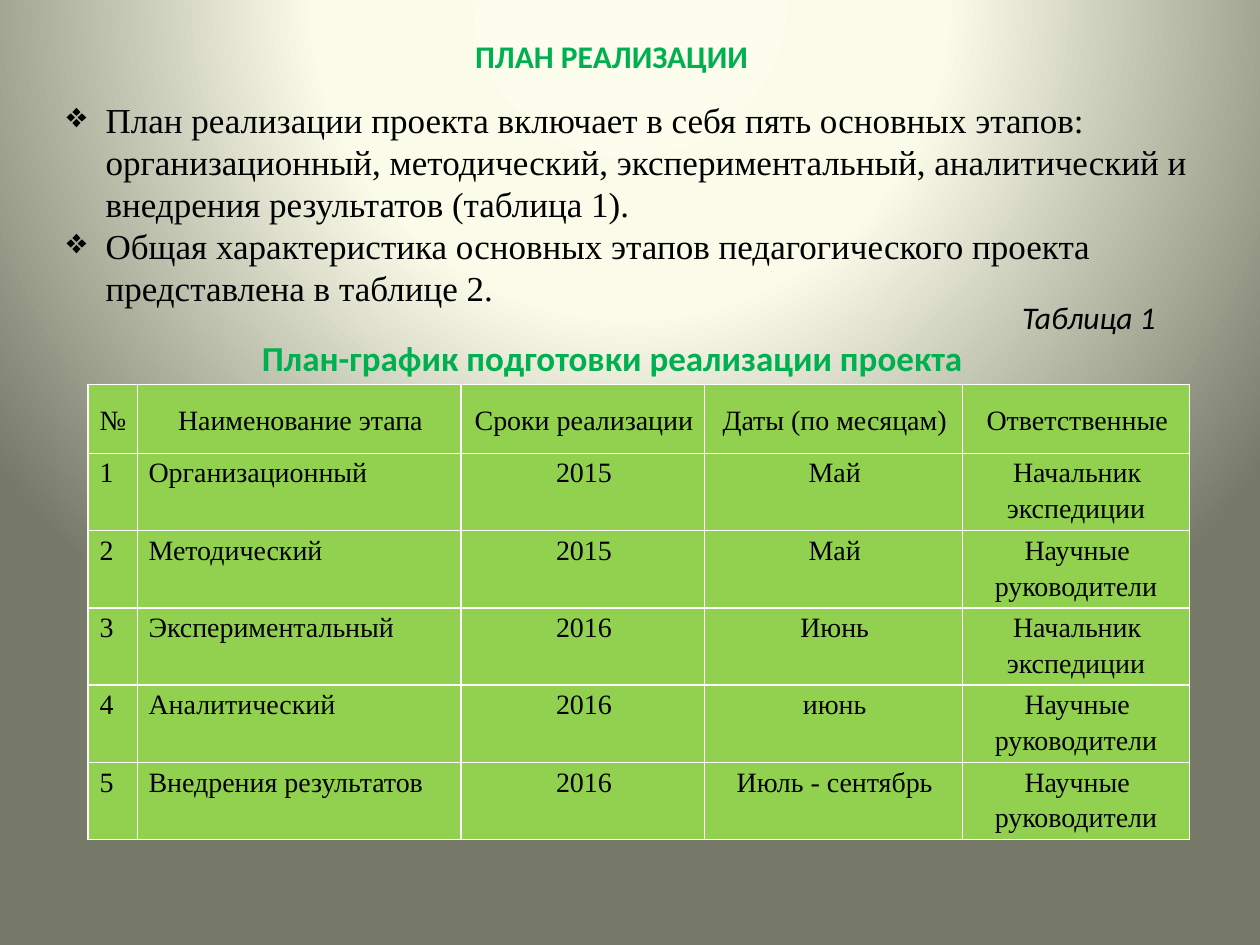
"""Build the slide with the project implementation plan and its schedule table."""
from dataclasses import dataclass
from typing import NamedTuple

from pptx import Presentation, oxml, util as u
from pptx.dml.color import RGBColor
from pptx.enum import text
from pptx.oxml.ns import nsdecls

COLORS = {"heading": "00B050", "ink": "000000", "cell": "92D050", "border": "FFFFFF"}
BACKDROP = {0: "FCFDED", 40: "FAFCE9", 100: "787A69"}
SERIF, SANS = "Times New Roman", "Calibri"
WIDTH, HEIGHT = u.Inches(10), u.Inches(7.5)
LEFT, CENTER, RIGHT = text.PP_ALIGN.LEFT, text.PP_ALIGN.CENTER, text.PP_ALIGN.RIGHT


class Area(NamedTuple):
    """Left, top, width and height in percent of the slide."""
    x: float
    y: float
    w: float
    h: float

    def box(self) -> tuple[int, ...]:
        return tuple(int(share * side / 100)
                     for share, side in zip(self, (WIDTH, HEIGHT) * 2))


@dataclass
class Line:
    """One paragraph and its look."""
    words: str
    size: int
    font: str = SERIF
    color: str = "ink"
    align: text.PP_ALIGN = LEFT
    bold: bool = False
    italic: bool = False
    bullet: str = ""
    indent: float = 0
    spacing: float = 1.0


class Column(NamedTuple):
    """Table column: heading, width in percent of the slide, alignment of entries."""
    heading: str
    width: float
    align: text.PP_ALIGN


TITLE_AREA = Area(20.2, 3.2, 56.7, 5.33)
INTRO_AREA = Area(4.3, 9.73, 91.4, 23.73)
CAPTION_AREA = Area(4.5, 30.93, 88.2, 9.87)
TABLE_AREA = Area(7, 40.67, 87.4, 48)
HEADER_HEIGHT, STAGE_HEIGHT = 7.3, 8.18

TITLE = Line("ПЛАН РЕАЛИЗАЦИИ", 18, SANS, "heading", CENTER, bold=True)
INTRO = [Line(words, 20, bullet="❖", indent=0.31) for words in (
    "План реализации проекта включает в себя пять основных этапов: организационный, "
    "методический, экспериментальный, аналитический и внедрения результатов (таблица 1).",
    "Общая характеристика основных этапов педагогического проекта "
    "представлена в таблице 2.",
)]
CAPTION = [
    Line("Таблица 1", 18, SANS, align=RIGHT, italic=True),
    Line("План-график подготовки реализации проекта", 20, SANS, "heading", CENTER, bold=True),
]
COLUMNS = [
    Column("№", 3.9, LEFT),
    Column("Наименование этапа", 25.7, LEFT),
    Column("Сроки реализации", 19.3, CENTER),
    Column("Даты (по месяцам)", 20.5, CENTER),
    Column("Ответственные", 18, CENTER),
]
CHIEF, ADVISERS = "Начальник экспедиции", "Научные руководители"
STAGES = [
    ("Организационный", "2015", "Май", CHIEF),
    ("Методический", "2015", "Май", ADVISERS),
    ("Экспериментальный", "2016", "Июнь", CHIEF),
    ("Аналитический", "2016", "июнь", ADVISERS),
    ("Внедрения результатов", "2016", "Июль - сентябрь", ADVISERS),
]


def paint_backdrop(slide) -> None:
    """Give the slide a circular gradient centred above the middle."""
    stops = "".join(f'<a:gs pos="{share * 1000}"><a:srgbClr val="{color}"/></a:gs>'
                    for share, color in BACKDROP.items())
    backdrop = oxml.parse_xml(
        f'<p:bg {nsdecls("p", "a")}><p:bgPr><a:gradFill rotWithShape="1">'
        f'<a:gsLst>{stops}</a:gsLst><a:path path="circle">'
        '<a:fillToRect l="50000" t="-80000" r="50000" b="180000"/></a:path>'
        '</a:gradFill><a:effectLst/></p:bgPr></p:bg>')
    slide.element.cSld.insert(0, backdrop)


def write(frame, lines: list[Line]) -> None:
    """Fill a text frame with formatted paragraphs."""
    frame.word_wrap = True
    for index, line in enumerate(lines):
        paragraph = frame.add_paragraph() if index else frame.paragraphs[0]
        paragraph.alignment = line.align
        paragraph.line_spacing = line.spacing
        run = paragraph.add_run()
        run.text = line.words
        run.font.name, run.font.size = line.font, u.Pt(line.size)
        run.font.bold, run.font.italic = line.bold, line.italic
        run.font.color.rgb = RGBColor.from_string(COLORS[line.color])
        properties = paragraph._p.get_or_add_pPr()
        indent = u.Inches(line.indent)
        if line.bullet:
            properties.set("marL", str(indent))
            properties.append(oxml.parse_xml(
                f'<a:buChar {nsdecls("a")} char="{line.bullet}"/>'))
        properties.set("indent", str(-indent if line.bullet else indent))


def add_text(slide, area: Area, lines: list[Line]) -> None:
    """Add a text box."""
    frame = slide.shapes.add_textbox(*area.box()).text_frame
    write(frame, lines)
    frame.auto_size = text.MSO_AUTO_SIZE.SHAPE_TO_FIT_TEXT


def set_title(slide, area: Area, line: Line) -> None:
    """Move and fill the title placeholder."""
    title = slide.shapes.title
    title.left, title.top, title.width, title.height = area.box()
    write(title.text_frame, [line])
    title.text_frame.vertical_anchor = text.MSO_ANCHOR.TOP
    title.text_frame.auto_size = text.MSO_AUTO_SIZE.SHAPE_TO_FIT_TEXT


def fill_cell(cell, words: str, align: text.PP_ALIGN, anchor: text.MSO_ANCHOR) -> None:
    """Write one table cell with its borders and fill."""
    write(cell.text_frame, [Line(words, 16, align=align, indent=0.02, spacing=1.15)])
    cell.margin_left = cell.margin_right = u.Inches(0.07)
    cell.margin_top = cell.margin_bottom = 0
    cell.vertical_anchor = anchor
    for side in "LRTB":
        cell._tc.get_or_add_tcPr().append(oxml.parse_xml(
            f'<a:ln{side} {nsdecls("a")} w="{u.Pt(1)}"><a:solidFill>'
            f'<a:srgbClr val="{COLORS["border"]}"/></a:solidFill></a:ln{side}>'))
    cell.fill.solid()
    cell.fill.fore_color.rgb = RGBColor.from_string(COLORS["cell"])


def add_schedule(slide) -> None:
    """Add the table of project stages."""
    table = slide.shapes.add_table(
        len(STAGES) + 1, len(COLUMNS), *TABLE_AREA.box()).table
    table.first_row = table.horz_banding = False
    for index, row in enumerate(table.rows):
        row.height = int(HEIGHT * (STAGE_HEIGHT if index else HEADER_HEIGHT) / 100)
    for index, column in enumerate(COLUMNS):
        table.columns[index].width = int(WIDTH * column.width / 100)
        heading_align = CENTER if index else LEFT
        fill_cell(table.cell(0, index), column.heading, heading_align, text.MSO_ANCHOR.MIDDLE)
        for number, stage in enumerate(STAGES, 1):
            entry = (str(number), *stage)[index]
            fill_cell(table.cell(number, index), entry, column.align, text.MSO_ANCHOR.TOP)


def main() -> None:
    """Assemble and save the slide."""
    deck = Presentation()
    deck.slide_width, deck.slide_height = WIDTH, HEIGHT
    slide = deck.slides.add_slide(deck.slide_layouts.get_by_name("Title Only"))
    paint_backdrop(slide)
    set_title(slide, TITLE_AREA, TITLE)
    add_text(slide, INTRO_AREA, INTRO)
    add_text(slide, CAPTION_AREA, CAPTION)
    add_schedule(slide)
    deck.save("out.pptx")


if __name__ == "__main__":
    main()
